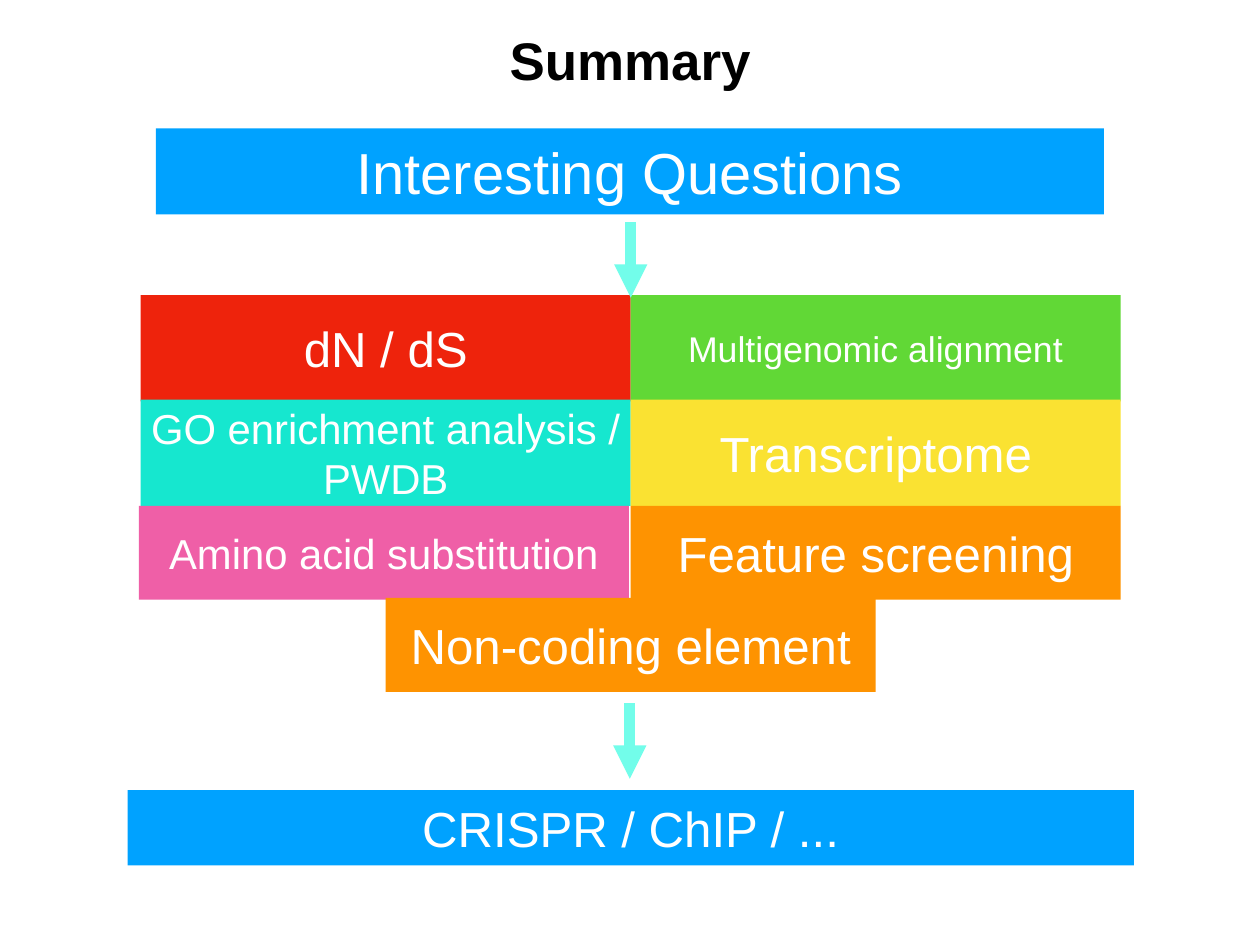
import pptx
import pptx.dml.color
import pptx.enum.shapes
import pptx.enum.text
import pptx.oxml.ns
import pptx.util
import lxml.etree

Pt = pptx.util.Pt
ALIGN = pptx.enum.text.PP_ALIGN
ANCHOR = pptx.enum.text.MSO_ANCHOR


def color(hex_value):
    return pptx.dml.color.RGBColor.from_string(hex_value)


def write_text(shape, text, size, hex_value, bold=False):
    """Fill the shape with one centred paragraph."""
    frame = shape.text_frame
    frame_format = {
        "word_wrap": True,
        "auto_size": pptx.enum.text.MSO_AUTO_SIZE.NONE,
        "vertical_anchor": ANCHOR.MIDDLE,
        "margin_left": Pt(4),
        "margin_right": Pt(4),
        "margin_top": Pt(4),
        "margin_bottom": Pt(4),
    }
    for name, value in frame_format.items():
        setattr(frame, name, value)
    paragraph = frame.paragraphs[0]
    paragraph.alignment = ALIGN.CENTER
    run = paragraph.add_run()
    run.text = text
    font_format = {"name": "Arial", "size": Pt(size), "bold": bold}
    for name, value in font_format.items():
        setattr(run.font, name, value)
    run.font.color.rgb = color(hex_value)


presentation = pptx.Presentation()
presentation.slide_width = Pt(1024)
presentation.slide_height = Pt(768)
slide = presentation.slides.add_slide(presentation.slide_layouts[5])

# Title
title = slide.shapes.title
title_place = {"left": 75, "top": -1, "width": 874, "height": 99}
for name, value in title_place.items():
    setattr(title, name, Pt(value))
write_text(title, "Summary", 43, "000000", bold=True)

# Boxes: the questions, a grid of methods, and the follow-up experiments
box_width = 398.2
left_column, right_column = 114.4, 512.6
boxes = [
    ("Interesting Questions", 47, "00A2FF", 126.7, 104.4, 770.4, 69.8),
    ("dN / dS", 40, "EE230C", left_column, 239.8, box_width, 86.4),
    ("Multigenomic alignment", 29, "61D836", right_column, 239.8, box_width, 86.4),
    ("GO enrichment analysis / PWDB", 34, "16E7CF", left_column, 324.7, box_width, 86.4),
    ("Transcriptome", 40, "FAE232", right_column, 324.7, box_width, 86.4),
    ("Amino acid substitution", 34, "EF5FA7", left_column - 1.4, 411.1, box_width, 76.3),
    ("Feature screening", 40, "FE9301", right_column, 411.1, box_width, 76.3),
    ("Non-coding element", 40, "FE9301", 313.4, 486, box_width, 76.3),
    ("CRISPR / ChIP / ...", 40, "00A2FF", 103.7, 642.2, 817.9, 61.2),
]
for text, size, fill, left, top, width, height in boxes:
    box = slide.shapes.add_shape(
        pptx.enum.shapes.MSO_SHAPE.RECTANGLE, Pt(left), Pt(top), Pt(width), Pt(height)
    )
    box.shadow.inherit = False
    box.fill.solid()
    box.fill.fore_color.rgb = color(fill)
    box.line.fill.background()
    write_text(box, text, size, "FFFFFF")

# Arrows between the stages
arrow_length = 61.2
for center, top in [(512.6, 180.7), (511.9, 571.7)]:
    arrow = slide.shapes.add_connector(
        pptx.enum.shapes.MSO_CONNECTOR.STRAIGHT,
        Pt(center), Pt(top), Pt(center), Pt(top + arrow_length),
    )
    arrow.line.width = Pt(9)
    arrow.line.color.rgb = color("72FDEA")
    line_properties = arrow.line._get_or_add_ln()
    lxml.etree.SubElement(
        line_properties, pptx.oxml.ns.qn("a:tailEnd"), type="triangle"
    )
    lxml.etree.SubElement(arrow._element.spPr, pptx.oxml.ns.qn("a:effectLst"))

presentation.save("out.pptx")
